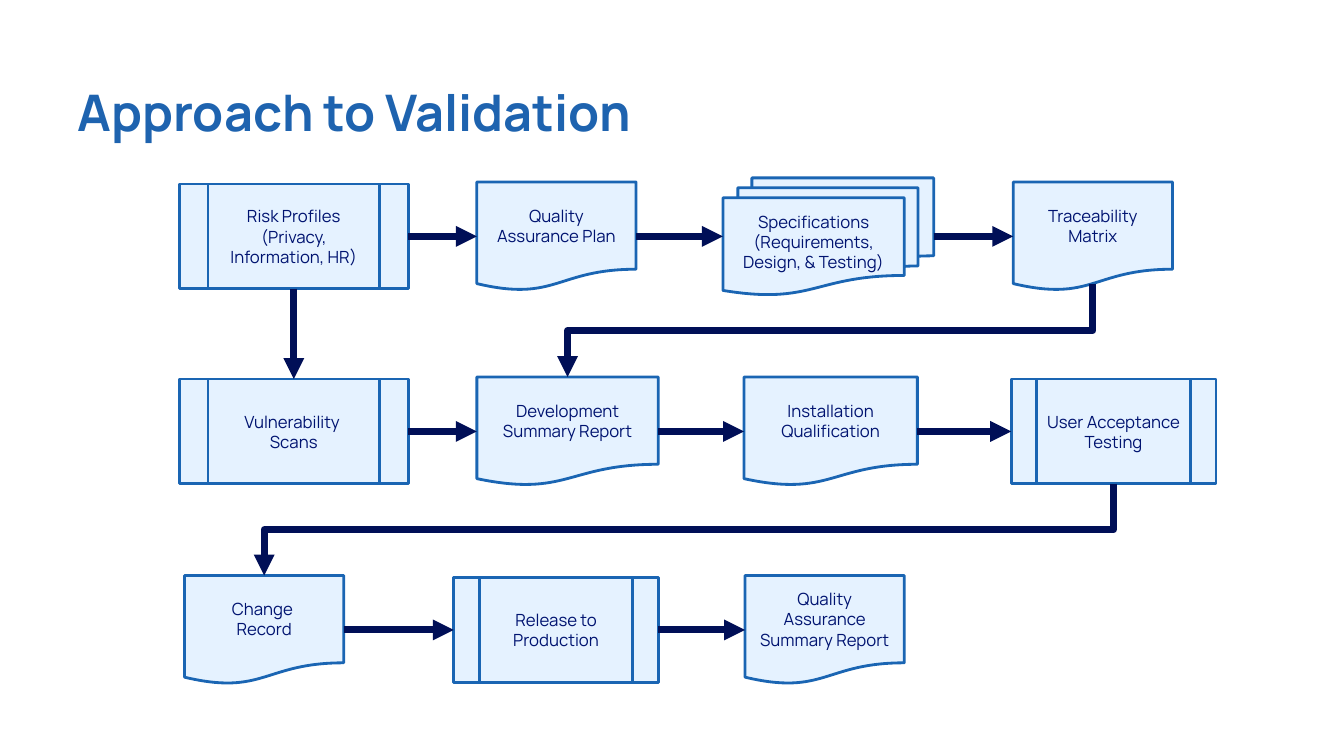
from itertools import pairwise

from lxml.etree import SubElement
from pptx import Presentation
from pptx.dml.color import RGBColor
from pptx.enum.shapes import MSO_CONNECTOR as Connector, MSO_SHAPE as Shape
from pptx.enum.text import MSO_ANCHOR as Anchor, PP_ALIGN as Align
from pptx.oxml.ns import qn
from pptx.util import Inches, Pt

TOP, LEFT, BOTTOM, RIGHT = range(4)
DOCUMENT = Shape.FLOWCHART_DOCUMENT
DOCUMENTS = Shape.FLOWCHART_MULTIDOCUMENT
PROCESS = Shape.FLOWCHART_PREDEFINED_PROCESS
HEIGHTS = {DOCUMENT: 14.4, DOCUMENTS: 15.47, PROCESS: 13.87}
DOCUMENT_EDGE = 0.94


def color(value):
    return RGBColor.from_string(value)


class FlowSlide:
    """Draws a flowchart on a grid of 100 columns by 100 rows."""

    font_name = "Manrope"
    title_color = "1E63AF"
    text_color = "001370"
    box_fill = "E5F2FF"
    box_line = "1A65B3"
    arrow_color = "000F57"

    def __init__(self, presentation):
        self.slide = presentation.slides.add_slide(presentation.slide_layouts[6])
        self.column = presentation.slide_width / 100
        self.row = presentation.slide_height / 100

    def place(self, left, top, width, height):
        return (round(left * self.column), round(top * self.row),
                round(width * self.column), round(height * self.row))

    def add_text(self, paragraph, text, size, text_color, bold=False):
        for index, line in enumerate(text.split("\n")):
            if index:
                paragraph.add_line_break()
            run = paragraph.add_run()
            run.text = line
            run.font.name = self.font_name
            run.font.size = Pt(size)
            run.font.bold = bold
            run.font.color.rgb = color(text_color)

    def title(self, text, left, top, width, height):
        box = self.slide.shapes.add_textbox(*self.place(left, top, width, height))
        frame = box.text_frame
        frame.word_wrap = True
        frame.vertical_anchor = Anchor.MIDDLE
        self.add_text(frame.paragraphs[0], text, 36, self.title_color, bold=True)

    def step(self, kind, text, left, width, middle):
        height = HEIGHTS[kind]
        shape = self.slide.shapes.add_shape(
            kind, *self.place(left, middle - height / 2, width, height))
        shape.shadow.inherit = False
        shape.fill.solid()
        shape.fill.fore_color.rgb = color(self.box_fill)
        shape.line.color.rgb = color(self.box_line)
        shape.line.width = Pt(2)
        frame = shape.text_frame
        frame.word_wrap = True
        frame.vertical_anchor = Anchor.MIDDLE
        if kind == PROCESS:
            frame.margin_left = frame.margin_right = Inches(0.08)
        if kind == DOCUMENTS:
            frame.margin_top = 0
        paragraph = frame.paragraphs[0]
        paragraph.alignment = Align.CENTER
        self.add_text(paragraph, text, 12, self.text_color)
        return shape

    def style_arrow(self, connector):
        connector.line.color.rgb = color(self.arrow_color)
        connector.line.width = Pt(5)
        properties = connector._element.spPr
        SubElement(properties.find(qn("a:ln")), qn("a:tailEnd"), type="triangle")
        SubElement(properties, qn("a:effectLst"))

    def arrow(self, source, source_side, target, target_side):
        connector = self.slide.shapes.add_connector(Connector.STRAIGHT, 0, 0, 0, 0)
        connector.begin_connect(source, source_side)
        connector.end_connect(target, target_side)
        self.style_arrow(connector)

    def return_arrow(self, source, target, edge=1):
        start_x = source.left + source.width / 2
        start_y = source.top + source.height * edge
        end_x = target.left + target.width / 2
        center_x, center_y = (start_x + end_x) / 2, (start_y + target.top) / 2
        half_drop, half_span = (target.top - start_y) / 2, (start_x - end_x) / 2
        connector = self.slide.shapes.add_connector(
            Connector.ELBOW,
            round(center_x - half_drop), round(center_y - half_span),
            round(center_x + half_drop), round(center_y + half_span))
        connector._element.spPr.find(qn("a:xfrm")).set("rot", "5400000")
        self.style_arrow(connector)


ROWS = [
    (31.27, [
        (PROCESS, "Risk Profiles (Privacy, Information, HR)", 13.35, 17.03),
        (DOCUMENT, "Quality Assurance Plan", 35.48, 11.85),
        (DOCUMENTS, "Specifications (Requirements, Design, & Testing)", 53.79, 15.68),
        (DOCUMENT, "Traceability Matrix", 75.39, 11.85),
    ]),
    (57.07, [
        (PROCESS, "Vulnerability \nScans", 13.35, 17.03),
        (DOCUMENT, "Development Summary Report", 35.48, 13.5),
        (DOCUMENT, "Installation Qualification", 55.36, 12.9),
        (PROCESS, "User Acceptance Testing", 75.24, 15.23),
    ]),
    (83.33, [
        (DOCUMENT, "Change \nRecord", 13.73, 11.85),
        (PROCESS, "Release to Production", 33.76, 15.23),
        (DOCUMENT, "Quality Assurance Summary Report", 55.44, 11.85),
    ]),
]


def main():
    presentation = Presentation()
    presentation.slide_width = Inches(13.33)
    presentation.slide_height = Inches(7.5)
    chart = FlowSlide(presentation)
    chart.title("Approach to Validation", 5.03, 9.6, 89.87, 10.27)

    planning, testing, release = [
        [chart.step(*step, middle) for step in steps] for middle, steps in ROWS]
    for steps in (planning, testing, release):
        for source, target in pairwise(steps):
            chart.arrow(source, RIGHT, target, LEFT)
    chart.arrow(planning[0], BOTTOM, testing[0], TOP)
    chart.return_arrow(planning[-1], testing[1], DOCUMENT_EDGE)
    chart.return_arrow(testing[-1], release[0])
    presentation.save("out.pptx")


if __name__ == "__main__":
    main()
